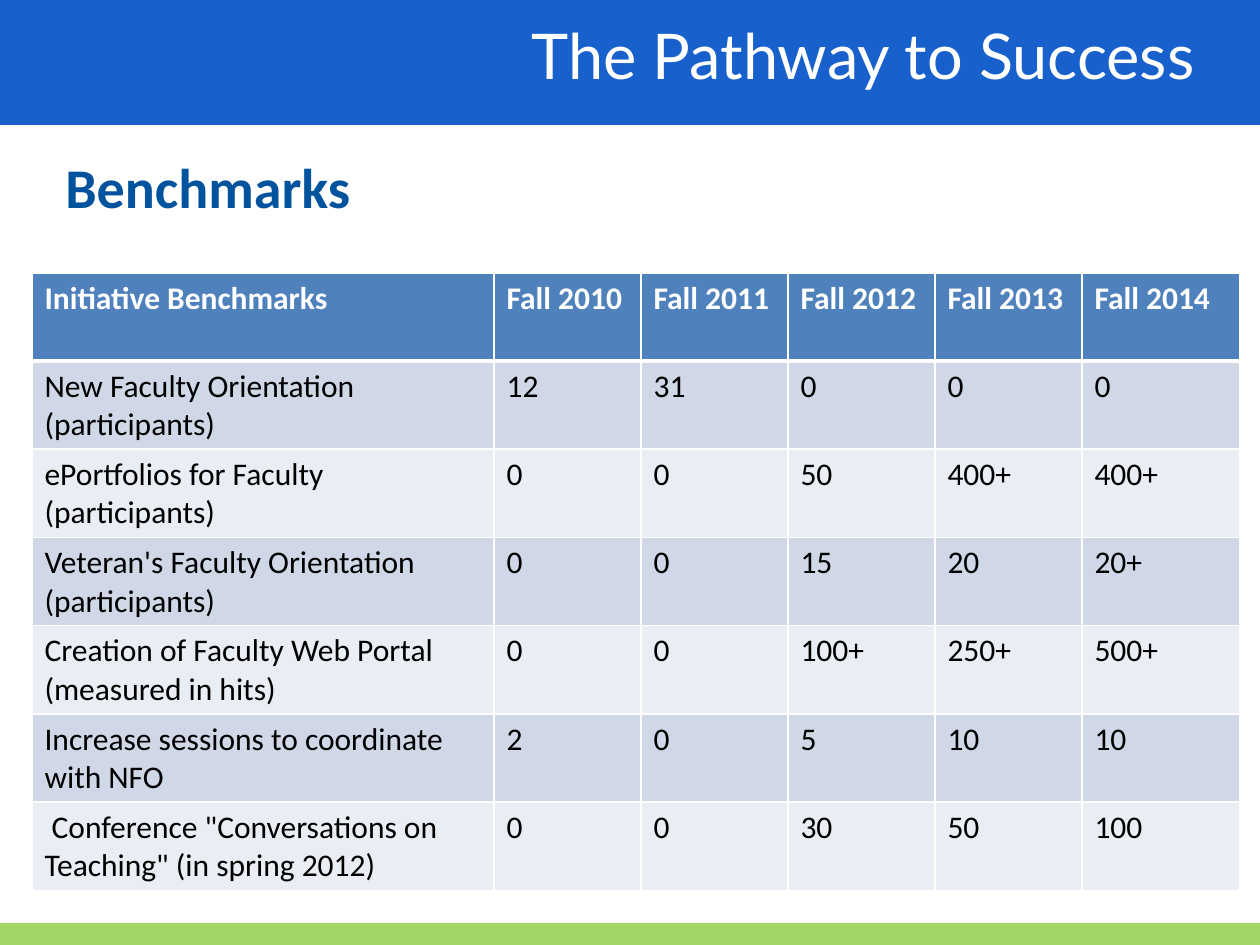
import pptx
import pptx.util
import pptx.dml.color
import pptx.enum.shapes
import pptx.enum.text
import pptx.oxml.ns
from lxml import etree

# Content
TITLE = "The Pathway to Success"
HEADING = "Benchmarks"
ROWS = [
    ("Initiative Benchmarks", "Fall 2010", "Fall 2011", "Fall 2012", "Fall 2013", "Fall 2014"),
    ("New Faculty Orientation (participants)", "12", "31", "0", "0", "0"),
    ("ePortfolios for Faculty (participants)", "0", "0", "50", "400+", "400+"),
    ("Veteran's Faculty Orientation (participants)", "0", "0", "15", "20", "20+"),
    ("Creation of Faculty Web Portal (measured in hits)", "0", "0", "100+", "250+", "500+"),
    ("Increase sessions to coordinate with NFO", "2", "0", "5", "10", "10"),
    (" Conference \"Conversations on Teaching\" (in spring 2012)", "0", "0", "30", "50", "100"),
]
COLS = [462, 147, 147, 147, 147, 158]
ROW_H = 88
COLORS = {
    "banner": "0F5BCB", "footer": "A2D668", "heading": "00539C",
    "head": "4F81BD", "odd": "D0D8E8", "even": "E9EDF4",
    "white": "FFFFFF", "black": "000000",
}
SCALE = 914400 // 126
Pt = pptx.util.Pt
qn = pptx.oxml.ns.qn


def px(*vals):
    return [v * SCALE for v in vals]


def rgb(name):
    return pptx.dml.color.RGBColor.from_string(COLORS[name])


def write(frame, text, size, font, color, bold=False):
    para = frame.paragraphs[0]
    run = para.add_run()
    run.text = text
    run.font.size = Pt(size)
    run.font.name = font
    run.font.bold = bold
    run.font.color.rgb = rgb(color)
    return para


def label(box, *style):
    frame = slide.shapes.add_textbox(*px(*box)).text_frame
    frame.word_wrap = True
    return write(frame, *style)


def edge(cell, side, width):
    line = etree.SubElement(cell._tc.get_or_add_tcPr(), qn("a:" + side), w=str(Pt(width)))
    fill = etree.SubElement(line, qn("a:solidFill"))
    etree.SubElement(fill, qn("a:srgbClr"), val=COLORS["white"])


deck = pptx.Presentation()
deck.slide_width, deck.slide_height = px(1260, 945)
slide = deck.slides.add_slide(deck.slide_layouts[6])

# Footer stripe
stripe = slide.shapes.add_connector(
    pptx.enum.shapes.MSO_CONNECTOR.STRAIGHT, *px(1260, 935, 0, 935))
stripe.line.color.rgb = rgb("footer")
stripe.line.width = Pt(14)
etree.SubElement(stripe._element.spPr, qn("a:effectLst"))

# Banner, slightly transparent
banner = slide.shapes.add_shape(
    pptx.enum.shapes.MSO_SHAPE.RECTANGLE, *px(0, 0, 1260, 125))
banner.shadow.inherit = False
banner.fill.solid()
banner.fill.fore_color.rgb = rgb("banner")
banner.line.fill.background()
tint = banner._element.spPr.find(qn("a:solidFill"))[0]
etree.SubElement(tint, qn("a:alpha"), val="96000")

# Title and heading
para = label((10, 10, 1197, 89), TITLE, 36, "Lato", "white")
para.alignment = pptx.enum.text.PP_ALIGN.RIGHT
para = label((53, 158, 693, 71), HEADING, 32, "Calibri", "heading", True)
para.line_spacing = Pt(32)

# Benchmark table
table = slide.shapes.add_table(
    len(ROWS), len(COLS), *px(32, 273, sum(COLS), ROW_H * len(ROWS))).table
for col, width in zip(table.columns, COLS):
    col.width = width * SCALE
for r, row in enumerate(ROWS):
    table.rows[r].height = ROW_H * SCALE
    head = r == 0
    shade = "head" if head else "odd" if r % 2 else "even"
    for c, text in enumerate(row):
        cell = table.cell(r, c)
        for side in ("lnL", "lnR", "lnT", "lnB"):
            thick = (head and side == "lnB") or (r == 1 and side == "lnT")
            edge(cell, side, 3 if thick else 1)
        cell.fill.solid()
        cell.fill.fore_color.rgb = rgb(shade)
        write(cell.text_frame, text, 18, "Calibri", "white" if head else "black", head)

deck.save("out.pptx")
